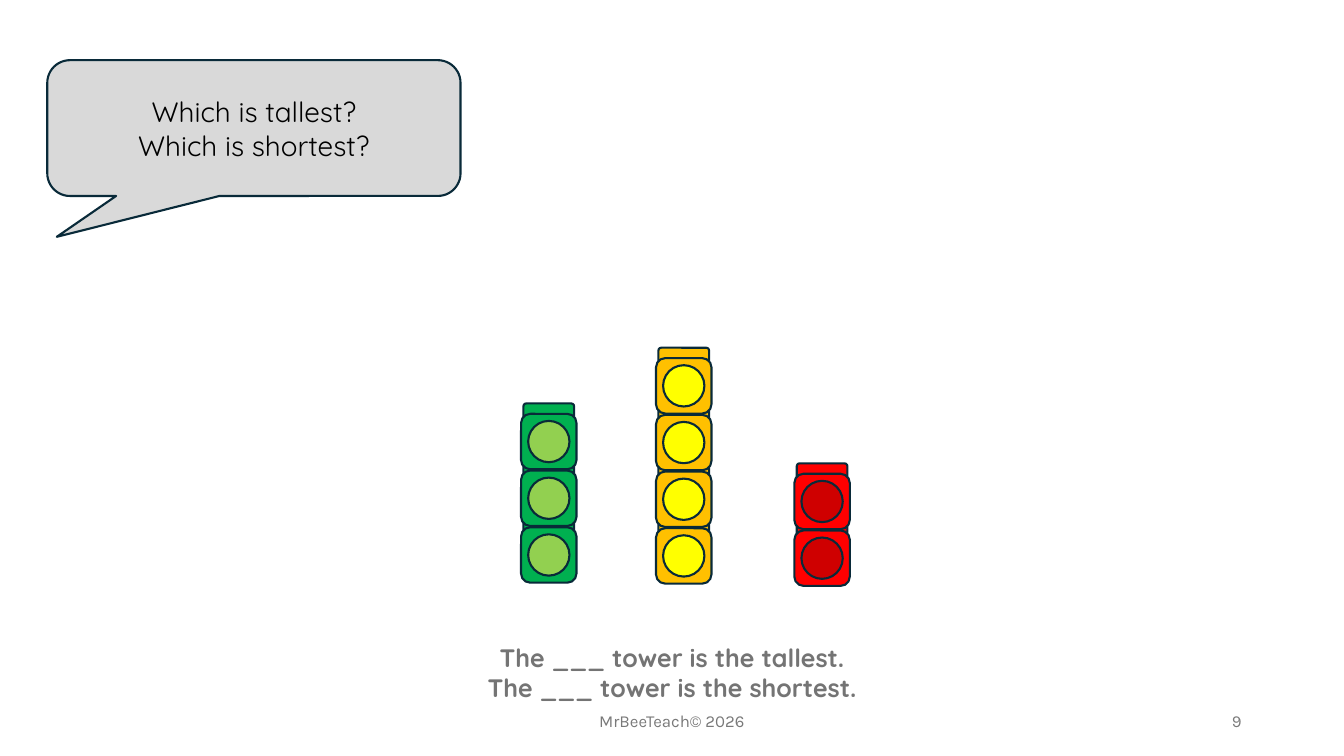
from lxml import etree
from pptx import Presentation
from pptx.dml.color import RGBColor
from pptx.enum.shapes import MSO_SHAPE
from pptx.enum.text import MSO_ANCHOR, PP_ALIGN
from pptx.oxml.ns import qn
from pptx.util import Pt

CENTER, RIGHT = PP_ALIGN.CENTER, PP_ALIGN.RIGHT
TOP, MIDDLE = MSO_ANCHOR.TOP, MSO_ANCHOR.MIDDLE
ROUNDED, CIRCLE = MSO_SHAPE.ROUNDED_RECTANGLE, MSO_SHAPE.OVAL
CALLOUT = MSO_SHAPE.ROUNDED_RECTANGULAR_CALLOUT

OUTLINE = "092A39"
CUBE = 39.6
CUBE_STEP = 40.5
STUD_W, STUD_H, STUD_RISE = 36.2, 12.2, 7.4
DISC = 29.5

# left, top of lowest cube, number of cubes, cube colour, disc colour, disc opacity
TOWERS = [
    (372.2, 376.6, 3, "00B050", "92D050", 100),
    (468.6, 377.3, 4, "FFC000", "FFFF00", 100),
    (567.4, 378.9, 2, "FF0000", "CC0000", 93),
]


def rgb(hex_colour):
    return RGBColor.from_string(hex_colour)


def add_outlined(shapes, kind, left, top, width, height, fill, opacity=100):
    s = shapes.add_shape(kind, Pt(left), Pt(top), Pt(width), Pt(height))
    s.shadow.inherit = False
    s.fill.solid()
    s.fill.fore_color.rgb = rgb(fill)
    s.line.color.rgb = rgb(OUTLINE)
    s.line.width = Pt(1.5)
    if opacity < 100:
        colour = s._element.spPr.find(qn("a:solidFill")).find(qn("a:srgbClr"))
        etree.SubElement(colour, qn("a:alpha")).set("val", str(opacity * 1000))
    return s


def write(s, lines, *, size, font, colour, bold=False, align=CENTER, anchor=MIDDLE):
    tf = s.text_frame
    tf.word_wrap = True
    tf.vertical_anchor = anchor
    for i, line in enumerate(lines):
        p = tf.add_paragraph() if i else tf.paragraphs[0]
        p.alignment = align
        r = p.add_run()
        r.text = line
        r.font.size = Pt(size)
        r.font.name = font
        r.font.bold = bold
        r.font.color.rgb = rgb(colour)


def add_text(slide, left, top, width, height, lines, **text_format):
    s = slide.shapes.add_textbox(Pt(left), Pt(top), Pt(width), Pt(height))
    write(s, lines, **text_format)


def add_cube(slide, left, top, fill, disc_fill, disc_opacity):
    shapes = slide.shapes.add_group_shape().shapes
    inset = (CUBE - DISC) / 2
    add_outlined(shapes, ROUNDED, left + (CUBE - STUD_W) / 2, top - STUD_RISE,
                 STUD_W, STUD_H, fill)
    add_outlined(shapes, ROUNDED, left, top, CUBE, CUBE, fill)
    add_outlined(shapes, CIRCLE, left + inset, top + inset, DISC, DISC,
                 disc_fill, disc_opacity)


def add_tower(slide, left, base_top, count, *colours):
    """Stack cubes upwards, so that each one covers the stud of the cube below."""
    for level in range(count):
        add_cube(slide, left, base_top - level * CUBE_STEP, *colours)


def main():
    prs = Presentation()
    prs.slide_width, prs.slide_height = Pt(960), Pt(540)
    slide = prs.slides.add_slide(prs.slide_layouts[6])

    footer = {"size": 12, "font": "Karla", "colour": "797979"}
    add_text(slide, 318, 500.5, 324, 28.8, ["MrBeeTeach© 2026"], **footer)
    add_text(slide, 678, 500.5, 216, 28.8, ["9"], align=RIGHT, **footer)
    add_text(slide, 240, 455, 480, 51,
             ["The ___ tower is the tallest.", "The ___ tower is the shortest."],
             size=18, font="Quicksand", colour="747474", bold=True, anchor=TOP)

    question = add_outlined(slide.shapes, CALLOUT, 33.8, 43, 295.2, 97, "D9D9D9")
    for i, value in enumerate((-0.477, 0.801, 0.167)):
        question.adjustments[i] = value
    write(question, ["Which is tallest?", "Which is shortest?"],
          size=20, font="Quicksand", colour="000000")

    for tower in TOWERS:
        add_tower(slide, *tower)

    prs.save("out.pptx")


if __name__ == "__main__":
    main()
